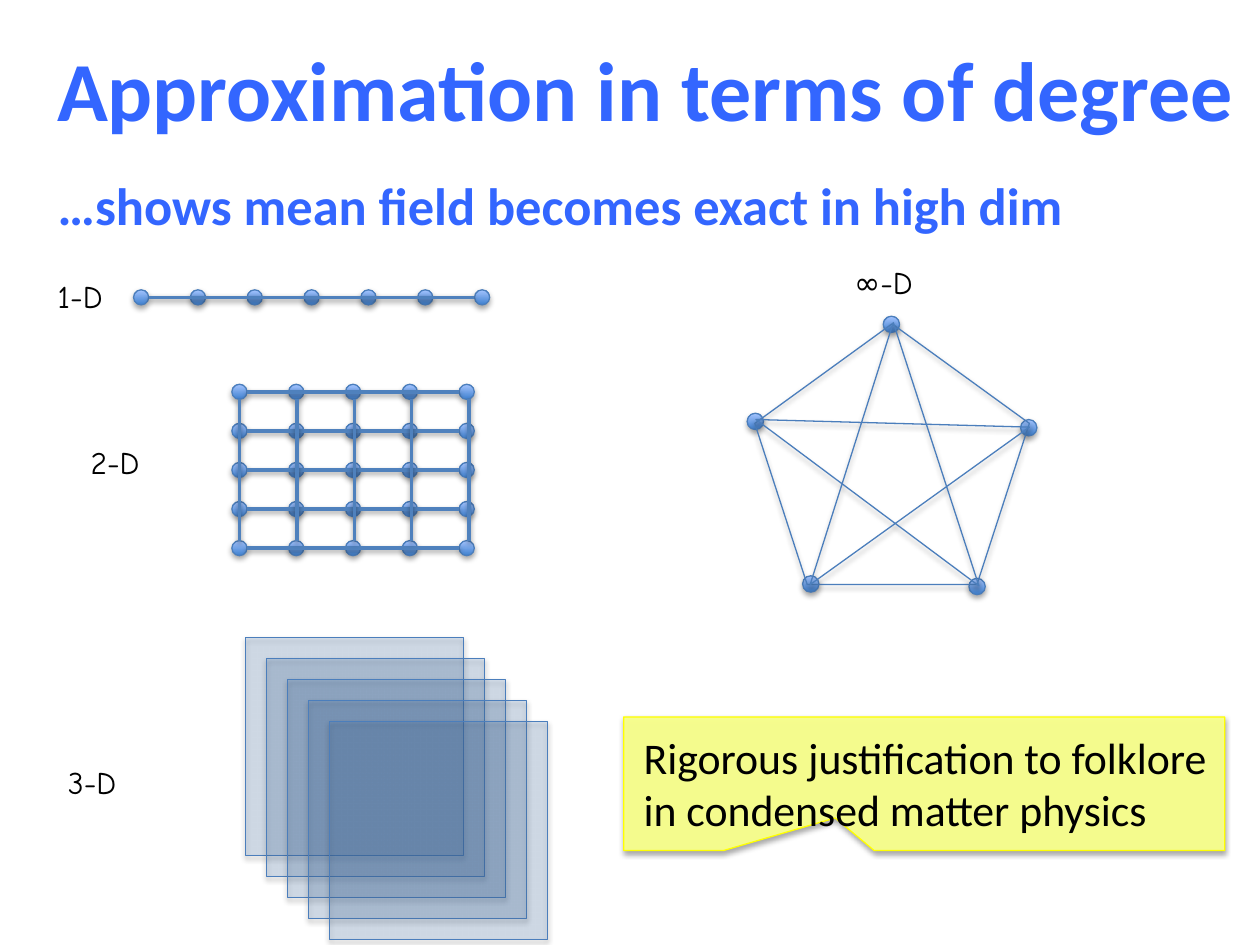
from itertools import product
from typing import NamedTuple

from lxml.etree import SubElement
from pptx import Presentation
from pptx.dml.color import RGBColor
from pptx.enum.shapes import MSO_CONNECTOR as Connector, MSO_SHAPE as Preset
from pptx.enum.text import MSO_ANCHOR, MSO_AUTO_SIZE as AutoSize, PP_ALIGN
from pptx.oxml.ns import qn
from pptx.util import Inches, Pt

TITLE_BLUE = RGBColor(0x33, 0x66, 0xFF)
LINK_BLUE = RGBColor(0x4F, 0x81, 0xBD)
OUTLINE_BLUE = RGBColor(0x4B, 0x7E, 0xBC)
NODE_DARK = RGBColor(0x3F, 0x80, 0xCE)
NODE_LIGHT = RGBColor(0xA4, 0xC4, 0xFF)
NOTE_FILL = RGBColor(0xF8, 0xFF, 0x8C)
NOTE_LINE = RGBColor(0xFF, 0xFF, 0x00)
BLACK = RGBColor(0, 0, 0)

NODE_SIZE = 0.12
STEP_X, STEP_Y = 0.451, 0.31


class Point(NamedTuple):
    x: float
    y: float


class TextItem(NamedTuple):
    text: str
    left: float
    top: float
    width: float
    height: float
    size: int = 18
    font: str = "Comic Neue"
    color: RGBColor = BLACK
    bold: bool = False
    wrap: bool = False


def add_shadow(shape, alpha: int = 35, distance: float = 1.8) -> None:
    properties = shape._element.spPr
    for old in properties.findall(qn("a:effectLst")):
        properties.remove(old)
    effects = SubElement(properties, qn("a:effectLst"))
    shadow = SubElement(effects, qn("a:outerShdw"), blurRad=str(Pt(3.1)),
                        dist=str(Pt(distance)), dir="5400000", rotWithShape="0")
    color = SubElement(shadow, qn("a:srgbClr"), val="000000")
    SubElement(color, qn("a:alpha"), val=str(alpha * 1000))


def style_outline(shape, color: RGBColor = OUTLINE_BLUE) -> None:
    shape.line.color.rgb = color
    shape.line.width = Pt(0.75)
    add_shadow(shape)


def fill_translucent(shape, color: RGBColor, alpha: int) -> None:
    shape.fill.solid()
    shape.fill.fore_color.rgb = color
    rgb = shape._element.spPr.find(qn("a:solidFill")).find(qn("a:srgbClr"))
    SubElement(rgb, qn("a:alpha"), val=str(alpha * 1000))


def add_preset(slide, preset, left: float, top: float, width: float, height: float):
    return slide.shapes.add_shape(
        preset, Inches(left), Inches(top), Inches(width), Inches(height))


def add_node(slide, left: float, top: float, size: float = NODE_SIZE) -> None:
    node = add_preset(slide, Preset.OVAL, left, top, size, size)
    node.fill.gradient()
    node.fill.gradient_angle = 90
    for stop, color in zip(node.fill.gradient_stops, (NODE_DARK, NODE_LIGHT)):
        stop.color.rgb = color
    style_outline(node)


def add_link(slide, start: Point, end: Point) -> None:
    link = slide.shapes.add_connector(
        Connector.STRAIGHT, Inches(start.x), Inches(start.y), Inches(end.x), Inches(end.y))
    link.line.color.rgb = LINK_BLUE
    link.line.width = Pt(2)
    add_shadow(link, alpha=38, distance=1.6)


def add_chain(slide, left: float, top: float, count: int) -> None:
    """Draw a row of evenly spaced nodes and the line through them."""
    for column in range(count):
        add_node(slide, left + column * STEP_X, top)
    middle = top + NODE_SIZE / 2
    last = left + (count - 1) * STEP_X
    add_link(slide, Point(last, middle), Point(left + NODE_SIZE, middle))


def add_text(slide, item: TextItem) -> None:
    box = slide.shapes.add_textbox(
        Inches(item.left), Inches(item.top), Inches(item.width), Inches(item.height))
    frame = box.text_frame
    frame.word_wrap = item.wrap
    frame.auto_size = AutoSize.SHAPE_TO_FIT_TEXT
    frame.text = item.text
    style_font(frame.paragraphs[0].font, item.size, item.font, item.color, item.bold)


def style_font(font, size: int, name: str, color: RGBColor, bold: bool) -> None:
    font.size, font.name, font.bold = Pt(size), name, bold
    font.color.rgb = color


def main() -> None:
    presentation = Presentation()
    presentation.slide_width, presentation.slide_height = Inches(10), Inches(7.5)
    slide = presentation.slides.add_slide(presentation.slide_layouts[5])

    # Title
    title = slide.shapes.title
    title.left, title.top = Inches(0.17), Inches(-0.26)
    title.width, title.height = Inches(9.91), Inches(1.91)
    frame = title.text_frame
    frame.text = "Approximation in terms of degree"
    frame.vertical_anchor = MSO_ANCHOR.MIDDLE
    frame.auto_size = AutoSize.NONE
    frame.paragraphs[0].alignment = PP_ALIGN.CENTER
    style_font(frame.paragraphs[0].font, 48, "Calibri", TITLE_BLUE, True)

    # Callout behind the conclusion
    callout = add_preset(slide, Preset.RECTANGULAR_CALLOUT, 4.95, 5.69, 4.77, 1.06)
    callout.adjustments[0], callout.adjustments[1] = -0.148, 0.257
    fill_translucent(callout, NOTE_FILL, 96)
    style_outline(callout, NOTE_LINE)

    # 1-D chain
    add_chain(slide, 1.06, 2.3, 7)

    # 2-D grid
    grid = Point(1.84, 3.05)
    for row in range(5):
        add_chain(slide, grid.x, grid.y + row * STEP_Y, 5)
    for column in range(5):
        x = grid.x + NODE_SIZE / 2 + column * 0.456
        add_link(slide, Point(x, grid.y + NODE_SIZE), Point(x, grid.y + 4 * STEP_Y))

    # 3-D stack of planes
    for layer in range(5):
        offset = layer / 6
        plane = add_preset(slide, Preset.RECTANGLE, 1.95 + offset, 5.06 + offset, 1.73, 1.73)
        fill_translucent(plane, LINK_BLUE, 20)
        style_outline(plane)

    # Infinite-dimensional complete graph
    for corner in (Point(7.01, 2.51), Point(6.37, 4.57), Point(7.69, 4.59),
                   Point(5.93, 3.28), Point(8.1, 3.33)):
        add_node(slide, corner.x, corner.y, 0.13)
    pentagon = add_preset(slide, Preset.REGULAR_PENTAGON, 5.99, 2.57, 2.18, 2.07)
    star_points = [(Inches(x), Inches(y)) for x, y in (
        (7.09, 2.56), (6.43, 4.64), (8.17, 3.39), (6, 3.33), (7.77, 4.65))]
    builder = slide.shapes.build_freeform(*star_points[0])
    builder.add_line_segments(star_points[1:], close=True)
    for outline in (pentagon, builder.convert_to_shape()):
        outline.fill.background()
        style_outline(outline)

    # Labels, subtitle and conclusion
    for item in (
        TextItem("1-D", 0.36, 2.15, 0.57, 0.4),
        TextItem("2-D", 0.62, 3.47, 0.62, 0.4),
        TextItem("3-D", 0.44, 6.01, 0.62, 0.4),
        TextItem("∞-D", 6.68, 2.04, 0.68, 0.4),
        TextItem("…shows mean field becomes exact in high dim", 0.36, 1.32, 9.72, 0.61,
                 30, "Calibri", TITLE_BLUE, bold=True, wrap=True),
        TextItem("Rigorous justification to folklore in condensed matter physics",
                 5.01, 5.75, 4.7, 0.94, 25, "Calibri", wrap=True),
    ):
        add_text(slide, item)

    presentation.save("out.pptx")


if __name__ == "__main__":
    main()
